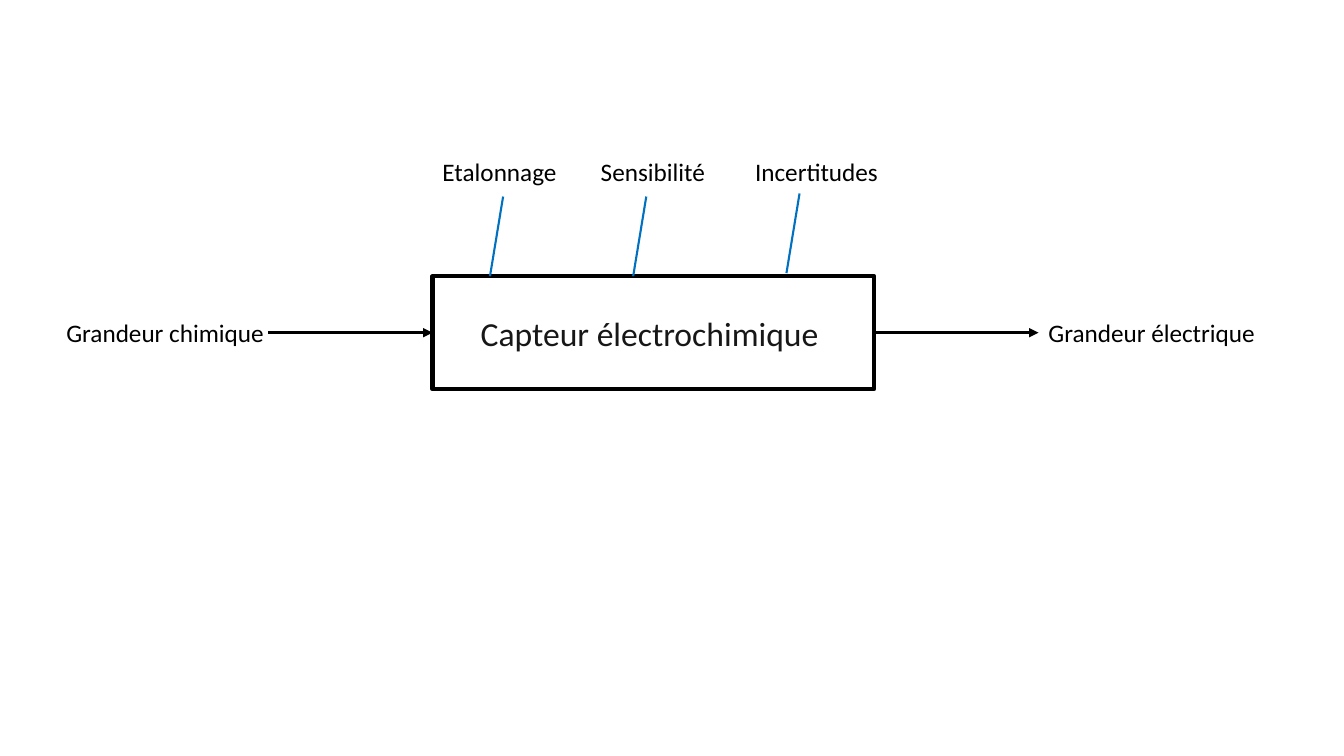
"""Build the block diagram of an electrochemical sensor."""
import pptx
import pptx.dml.color
import pptx.enum.shapes
import pptx.enum.text
import pptx.oxml
import pptx.oxml.ns
import pptx.util

BLACK = pptx.dml.color.RGBColor(0x00, 0x00, 0x00)
INK = pptx.dml.color.RGBColor(0x18, 0x17, 0x17)
BLUE = pptx.dml.color.RGBColor(0x00, 0x70, 0xC0)
FONT = "Calibri"
PX = 9144

SLIDE_SIZE = (1333, 750)
SENSOR = ("Capteur électrochimique ", (429, 274, 438, 112))
QUANTITIES = [("Grandeur chimique", 56), ("Grandeur électrique", 1030)]
QUANTITY_TOP, QUANTITY_WIDTH = 310, 290
PROPERTIES = [
    ("Etalonnage", 429, 486, 274),
    ("Sensibilité", 586, 628, 274),
    ("Incertitudes", 739, 780, 271),
]
PROPERTY_TOP, PROPERTY_WIDTH = 150, 201
LABEL_HEIGHT = 40
ARROW_Y, ARROW_LENGTH = 330, 163
LINK_RUN, LINK_RISE = 13, 79


def px(*lengths):
    return [pptx.util.Emu(length * PX) for length in lengths]


def write(frame, text, size, color):
    paragraph = frame.paragraphs[0]
    paragraph.text = text
    paragraph.font.name = FONT
    paragraph.font.size = pptx.util.Pt(size)
    paragraph.font.color.rgb = color
    return paragraph


def add_label(slide, text, left, top, width):
    frame = slide.shapes.add_textbox(*px(left, top, width, LABEL_HEIGHT)).text_frame
    frame.word_wrap = True
    frame.auto_size = pptx.enum.text.MSO_AUTO_SIZE.SHAPE_TO_FIT_TEXT
    write(frame, text, 18, BLACK)


def add_line(slide, ends, color, weight, arrow=False):
    line = slide.shapes.add_connector(
        pptx.enum.shapes.MSO_CONNECTOR.STRAIGHT, *px(*ends))
    line.line.color.rgb = color
    line.line.width = pptx.util.Pt(weight)
    if arrow:
        tail = pptx.oxml.parse_xml(
            f'<a:tailEnd {pptx.oxml.ns.nsdecls("a")} type="triangle"/>')
        line.line._get_or_add_ln().append(tail)
    line._element.spPr.append(
        pptx.oxml.parse_xml(f'<a:effectLst {pptx.oxml.ns.nsdecls("a")}/>'))


def add_sensor(slide):
    text, bounds = SENSOR
    box = slide.shapes.add_shape(
        pptx.enum.shapes.MSO_SHAPE.RECTANGLE, *px(*bounds))
    box.shadow.inherit = False
    box.fill.background()
    box.line.color.rgb = BLACK
    box.line.width = pptx.util.Pt(3)
    box.text_frame.word_wrap = True
    box.text_frame.vertical_anchor = pptx.enum.text.MSO_ANCHOR.MIDDLE
    paragraph = write(box.text_frame, text, 24, INK)
    paragraph.alignment = pptx.enum.text.PP_ALIGN.CENTER


def main():
    deck = pptx.Presentation()
    deck.slide_width, deck.slide_height = px(*SLIDE_SIZE)
    slide = deck.slides.add_slide(deck.slide_layouts[6])

    add_sensor(slide)
    left, _, width, _ = SENSOR[1]
    for start in (left - ARROW_LENGTH, left + width):
        ends = (start, ARROW_Y, start + ARROW_LENGTH, ARROW_Y)
        add_line(slide, ends, BLACK, 2.25, arrow=True)
    for quantity, quantity_left in QUANTITIES:
        add_label(slide, quantity, quantity_left, QUANTITY_TOP, QUANTITY_WIDTH)
    for name, name_left, foot_x, foot_y in PROPERTIES:
        add_label(slide, name, name_left, PROPERTY_TOP, PROPERTY_WIDTH)
        ends = (foot_x, foot_y, foot_x + LINK_RUN, foot_y - LINK_RISE)
        add_line(slide, ends, BLUE, 1.5)

    deck.save("out.pptx")


if __name__ == "__main__":
    main()
